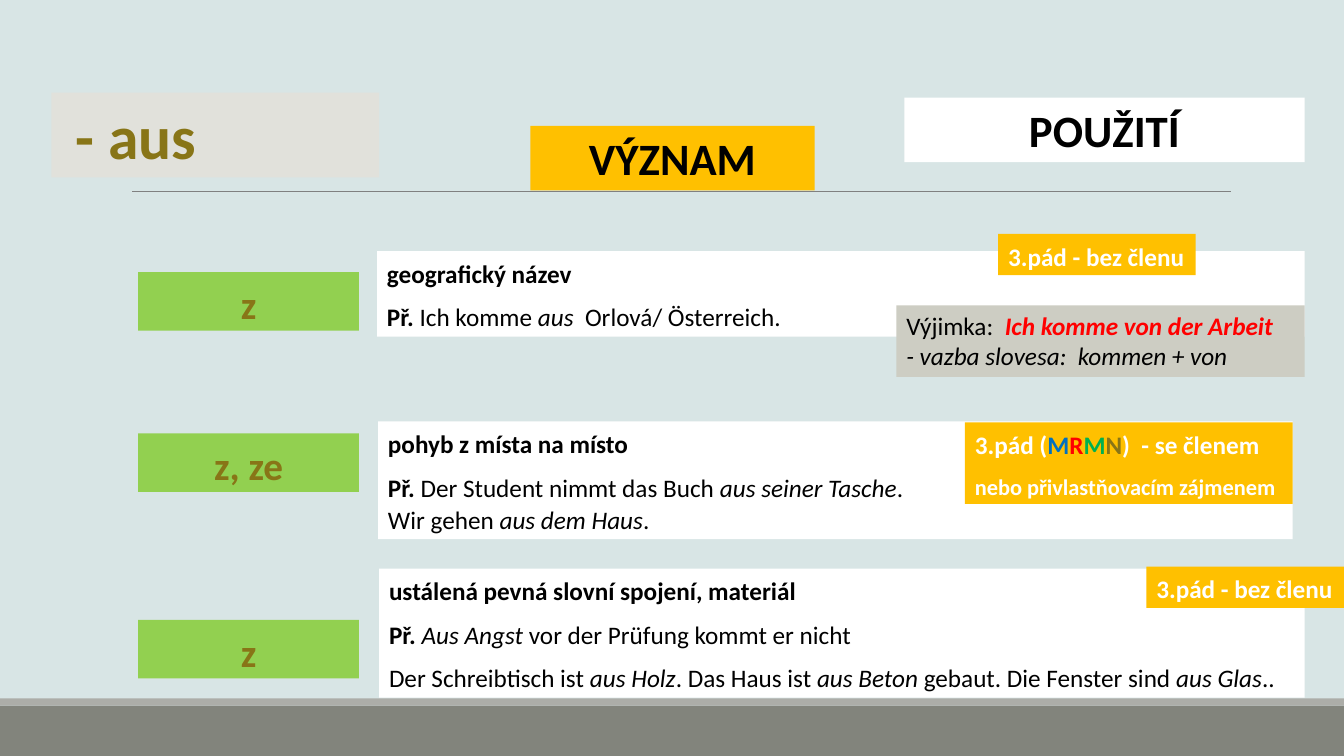
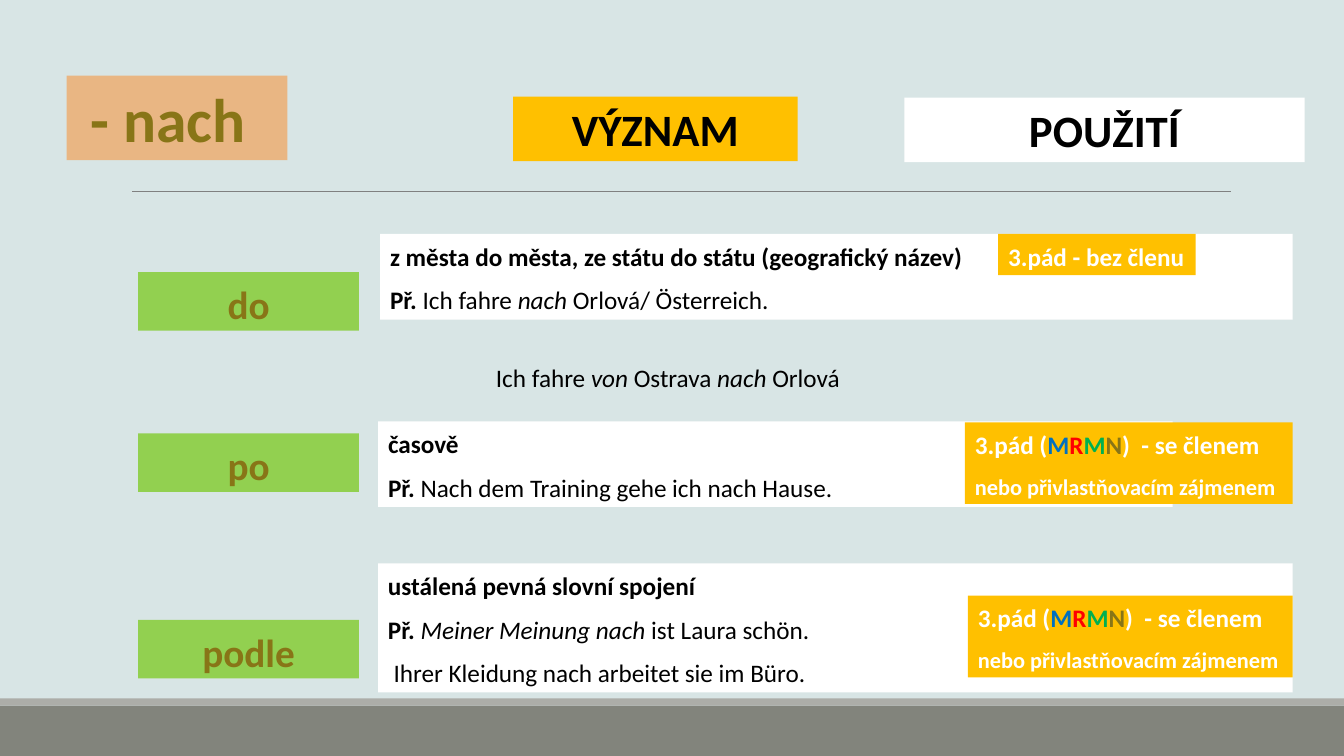
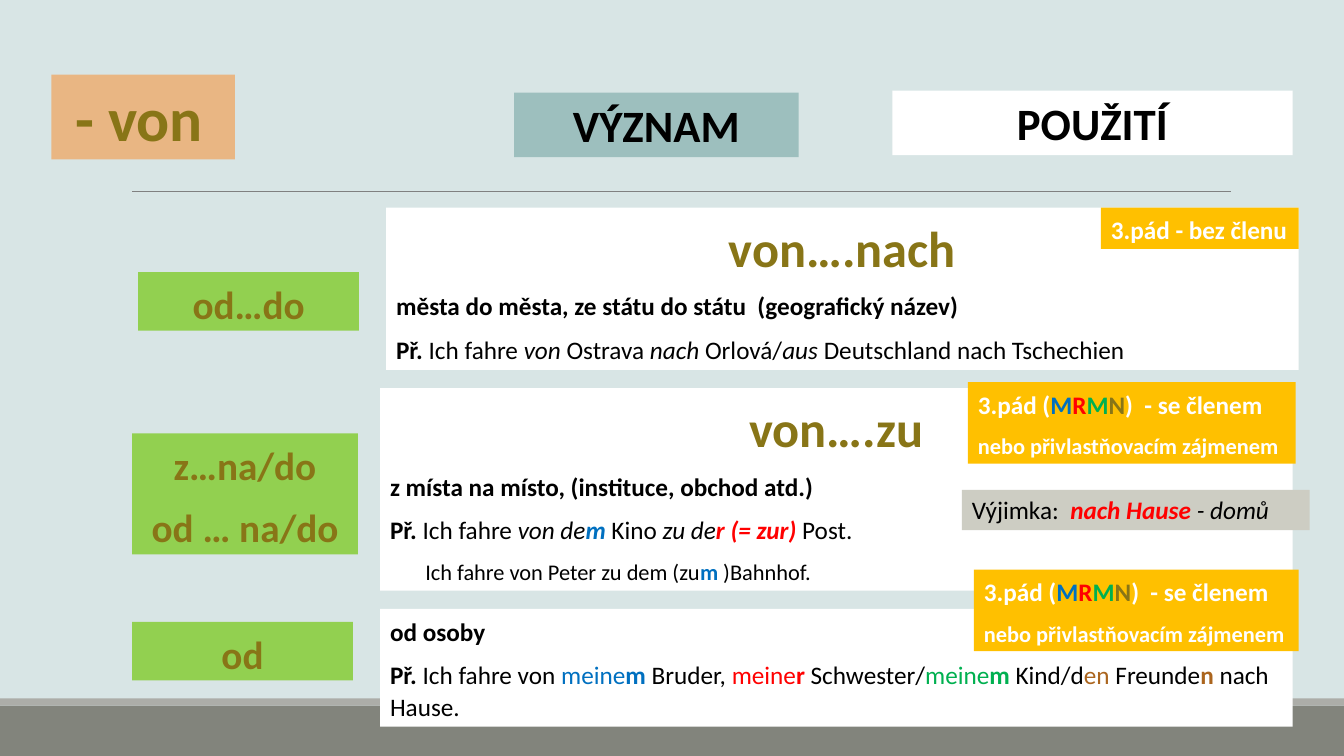
from dataclasses import dataclass

from lxml.etree import SubElement
from pptx import Presentation
from pptx.dml.color import RGBColor
from pptx.enum.shapes import MSO_CONNECTOR, MSO_SHAPE
from pptx.enum.text import MSO_ANCHOR, MSO_AUTO_SIZE, PP_ALIGN
from pptx.oxml.ns import qn
from pptx.util import Inches, Pt


@dataclass(frozen=True)
class Theme:
    """Colours, font and type sizes shared by all slides."""
    font: str = "Calibri"
    background: str = "D8E5E5"
    footer: str = "82847C"
    footer_edge: str = "ACADA8"
    rule: str = "808080"
    white: str = "FFFFFF"
    black: str = "000000"
    olive: str = "887517"
    amber: str = "FFC000"
    lime: str = "92D050"
    stone: str = "CDCDC3"
    pale: str = "E1E1DB"
    peach: str = "E9B683"
    teal: str = "9DBFBE"
    blue: str = "0070C0"
    red: str = "FF0000"
    green: str = "00B050"
    brown: str = "AB651E"
    title_size: int = 44
    pair_size: int = 36
    heading_size: int = 32
    cue_size: int = 28
    body_size: int = 18
    small_size: int = 16


THEME = Theme()
CUE_TOPS = (2.7, 4.3, 6.15)


@dataclass(frozen=True)
class Span:
    """A stretch of text in one style."""
    text: str
    color: str = THEME.black
    bold: bool = False
    italic: bool = False


@dataclass(frozen=True)
class Para:
    """A paragraph made of spans."""
    spans: tuple
    size: int = THEME.body_size
    align: PP_ALIGN = PP_ALIGN.LEFT
    indent: float = 0
    spaced: bool = True


def bold(text, color=THEME.black):
    """Return a bold span."""
    return Span(text, color, bold=True)


def italic(text):
    """Return an italic span."""
    return Span(text, italic=True)


def strong(text, color):
    """Return a bold italic span."""
    return Span(text, color, bold=True, italic=True)


def line(*parts, **options):
    """Return a paragraph from spans and plain strings."""
    return Para(tuple(Span(part) if isinstance(part, str) else part for part in parts), **options)


def example(*parts):
    """Return a paragraph that opens with the example mark."""
    return line(bold("Př. "), *parts)


def pair(text):
    """Return the centred name of a pair of prepositions."""
    return line(bold(text, THEME.olive), size=THEME.pair_size, align=PP_ALIGN.CENTER)


def paint(fill, color):
    """Make a fill solid in one colour."""
    fill.solid()
    fill.fore_color.rgb = RGBColor.from_string(color)


def write_para(paragraph, para):
    """Write and format one paragraph."""
    paragraph.alignment = para.align
    if para.spaced:
        paragraph.line_spacing = 1.07
        paragraph.space_after = Pt(8)
    if para.indent:
        paragraph._p.get_or_add_pPr().set("marL", str(Inches(para.indent)))
    for span in para.spans:
        if span.text == "\n":
            paragraph.add_line_break()
            continue
        run = paragraph.add_run()
        run.text = span.text
        run.font.name = THEME.font
        run.font.size = Pt(para.size)
        run.font.bold = span.bold
        run.font.italic = span.italic
        run.font.color.rgb = RGBColor.from_string(span.color)


def add_box(page, at, fill, paras, wrap=True):
    """Add a text box, filled if a colour is given."""
    box = page.shapes.add_textbox(*(Inches(value) for value in at))
    if fill:
        paint(box.fill, fill)
    frame = box.text_frame
    frame.word_wrap = wrap
    frame.auto_size = MSO_AUTO_SIZE.SHAPE_TO_FIT_TEXT
    for index, para in enumerate(paras):
        write_para(frame.add_paragraph() if index else frame.paragraphs[0], para)


def add_title(page, text, at, fill):
    """Place and format the title placeholder."""
    title = page.shapes.title
    title.left, title.top, title.width, title.height = (Inches(value) for value in at)
    paint(title.fill, fill)
    frame = title.text_frame
    frame.word_wrap = True
    frame.auto_size = MSO_AUTO_SIZE.NONE
    frame.vertical_anchor = MSO_ANCHOR.MIDDLE
    write_para(frame.paragraphs[0],
               line(bold(text, THEME.olive), size=THEME.title_size, spaced=False))


def add_heading(page, text, at, fill):
    """Add a column heading."""
    add_box(page, at, fill,
            [line(bold(text), size=THEME.heading_size, align=PP_ALIGN.CENTER, spaced=False)])


def add_headings(page, meaning_at, use_at, meaning_fill=THEME.amber):
    """Add the headings for meaning and use."""
    add_heading(page, "VÝZNAM", (*meaning_at, 2.82, 0.64), meaning_fill)
    add_heading(page, "POUŽITÍ", (*use_at, 3.97, 0.64), THEME.white)


def add_meaning(page, at, *paras):
    """Add a white box with a meaning and its examples."""
    add_box(page, at, THEME.white, paras)


def add_cue(page, top, *texts, left=1.37, width=2.19):
    """Add a green box with the Czech equivalents."""
    add_box(page, (left, top, width, 0.58 + 0.62 * (len(texts) - 1)), THEME.lime,
            [line(bold(text, THEME.olive), size=THEME.cue_size, align=PP_ALIGN.CENTER)
             for text in texts])


def add_bare_note(page, left, top):
    """Add the note on the dative without an article."""
    add_box(page, (left, top, 1.96, 0.41), THEME.amber,
            [line(bold("3.pád - bez členu", THEME.white))], wrap=False)


def add_article_note(page, left, top, width=3.25):
    """Add the note on the dative with an article."""
    letters = zip("MRMN", (THEME.blue, THEME.red, THEME.green, THEME.olive))
    add_box(page, (left, top, width, 0.81), THEME.amber, [
        line(bold("3.pád (", THEME.white),
             *(bold(letter, color) for letter, color in letters),
             bold(")  - se členem", THEME.white)),
        line(bold("nebo přivlastňovacím zájmenem", THEME.white), size=THEME.small_size),
    ], wrap=False)


def add_exception(page, at, phrase, *rest):
    """Add a grey box with an exception to the rule."""
    first = ["Výjimka:  ", strong(phrase, THEME.red)]
    lines = [first, *([part] for part in rest)] if phrase[-1] != " " else [first + list(rest)]
    add_box(page, at, THEME.stone, [line(*parts, spaced=False) for parts in lines])


def add_band(page, top, height, color):
    """Add a band across the full width."""
    band = page.shapes.add_shape(MSO_SHAPE.RECTANGLE, 0, Inches(top), Inches(13.33), Inches(height))
    band.shadow.inherit = False
    paint(band.fill, color)
    band.line.fill.background()
    return band


def add_rule(page):
    """Add the thin line below the headings."""
    rule = page.shapes.add_connector(MSO_CONNECTOR.STRAIGHT, Inches(1.31), Inches(1.9),
                                     Inches(12.21), Inches(1.9))
    paint(rule.line.fill, THEME.rule)
    rule.line.width = Pt(0.5)
    SubElement(rule._element.spPr, qn("a:effectLst"))
    return rule


def dress_master(deck, page):
    """Move the background, bands and rule into the slide master."""
    master = deck.slide_master
    paint(master.background.fill, THEME.background)
    decor = (add_band(page, 7, 0.5, THEME.footer),
             add_band(page, 6.93, 0.07, THEME.footer_edge), add_rule(page))
    for number, shape in enumerate(decor, start=101):
        shape.element.xpath(".//p:cNvPr")[0].set("id", str(number))
        master.shapes.element.append(shape.element)


def build_aus(page):
    """Build the slide on aus."""
    add_title(page, " - aus", (0.51, 0.92, 3.25, 0.84), THEME.pale)
    add_headings(page, (5.26, 1.25), (8.97, 0.97))
    add_meaning(page, (3.74, 2.49, 9.2, 0.85), line(bold("geografický název")),
                example("Ich komme ", italic("aus "), " Orlová/ Österreich."))
    add_meaning(page, (3.75, 4.18, 9.07, 1.17), line(bold("pohyb z místa na místo")),
                example("Der Student nimmt das Buch ", italic("aus seiner Tasche"), ".", "\n",
                        "Wir gehen ", italic("aus dem Haus"), "."))
    add_meaning(page, (3.76, 5.64, 9.18, 1.28),
                line(bold("ustálená pevná slovní spojení, materiál")),
                example(italic("Aus Angst"), " vor der Prüfung kommt er nicht"),
                line("Der Schreibtisch ist ", italic("aus Holz"), ". Das Haus ist ",
                     italic("aus Beton"), " gebaut. Die Fenster sind ", italic("aus Glas"), ".."))
    for top, text in zip(CUE_TOPS, ("z", "z, ze", "z")):
        add_cue(page, top, text)
    add_bare_note(page, 9.9, 2.32)
    add_article_note(page, 9.57, 4.19)
    add_bare_note(page, 11.37, 5.62)
    add_exception(page, (8.89, 3.03, 4.05, 0.71), "Ich komme von der Arbeit",
                  italic("- vazba slovesa:  kommen + von"))


def build_nach(page):
    """Build the slide on nach."""
    add_title(page, " - nach", (0.66, 0.75, 2.19, 0.84), THEME.peach)
    add_headings(page, (5.09, 0.96), (8.97, 0.97))
    add_meaning(page, (3.77, 2.32, 9.05, 0.85),
                line(bold("z města do města, ze státu do státu (geografický název)")),
                example("Ich fahre ", italic("nach"), " Orlová/ Österreich."))
    add_meaning(page, (3.75, 4.18, 7.88, 0.85), line(bold("časově")),
                example("Nach dem Training gehe ich nach Hause."))
    add_meaning(page, (3.75, 5.59, 9.07, 1.28), line(bold("ustálená pevná slovní spojení")),
                example(italic("Meiner Meinung nach "), "ist Laura schön."),
                line(" Ihrer Kleidung nach arbeitet sie im Büro."))
    for top, text in zip(CUE_TOPS, ("do", "po", "podle")):
        add_cue(page, top, text)
    add_bare_note(page, 9.9, 2.32)
    add_article_note(page, 9.57, 4.19)
    add_article_note(page, 9.6, 5.91, 3.22)
    add_box(page, (4.82, 3.55, 3.69, 0.4), None,
            [line("Ich fahre ", italic("von "), "Ostrava ", italic("nach"), " Orlová",
                  spaced=False)], wrap=False)


def build_von(page):
    """Build the slide on von."""
    add_title(page, " - von", (0.51, 0.74, 1.82, 0.84), THEME.peach)
    add_headings(page, (5.1, 0.92), (8.85, 0.9), THEME.teal)
    add_meaning(page, (3.83, 2.06, 9.05, 1.61), pair("von….nach"),
                line(bold("města do města, ze státu do státu  (geografický název)")),
                example("Ich fahre ", italic("von "), "Ostrava ", italic("nach"), " Orlová/",
                        italic("aus "), "Deutschland nach Tschechien"))
    add_meaning(page, (3.77, 3.85, 9.05, 2.01), pair("von….zu"),
                line(bold("z místa na místo, (instituce, obchod atd.)")),
                example("Ich fahre ", italic("von de"), strong("m ", THEME.blue), "Kino ",
                        italic("zu de"), strong("r (= zur) ", THEME.red), "Post."),
                line("Ich fahre von Peter zu dem (zu", bold("m", THEME.blue), " )Bahnhof.",
                     size=THEME.small_size, indent=0.35))
    add_meaning(page, (3.77, 6.04, 9.05, 1.17), line(bold("od osoby")),
                example("Ich fahre von ",
                        Span("meine", THEME.blue), bold("m ", THEME.blue), "Bruder, ",
                        Span("meine", THEME.red), bold("r ", THEME.red), "Schwester/",
                        Span("meine", THEME.green), bold("m ", THEME.green), "Kind/d",
                        Span("en ", THEME.brown), "Freunde", bold("n ", THEME.brown),
                        "nach Hause."))
    add_cue(page, 2.7, "od…do")
    add_cue(page, 4.3, "z…na/do", "od … na/do", left=1.31, width=2.24)
    add_cue(page, 6.17, "od", left=1.31)
    add_bare_note(page, 10.92, 2.06)
    add_article_note(page, 9.6, 3.79)
    add_article_note(page, 9.66, 5.65, 3.22)
    add_exception(page, (9.54, 4.86, 3.45, 0.4), "nach Hause ", italic("- domů"))


def main():
    """Build and save the deck."""
    deck = Presentation()
    deck.slide_width, deck.slide_height = Inches(13.33), Inches(7.5)
    builders = (build_aus, build_nach, build_von)
    pages = [deck.slides.add_slide(deck.slide_layouts[5]) for _ in builders]
    dress_master(deck, pages[0])
    for build, page in zip(builders, pages):
        build(page)
    deck.save("out.pptx")


if __name__ == "__main__":
    main()
